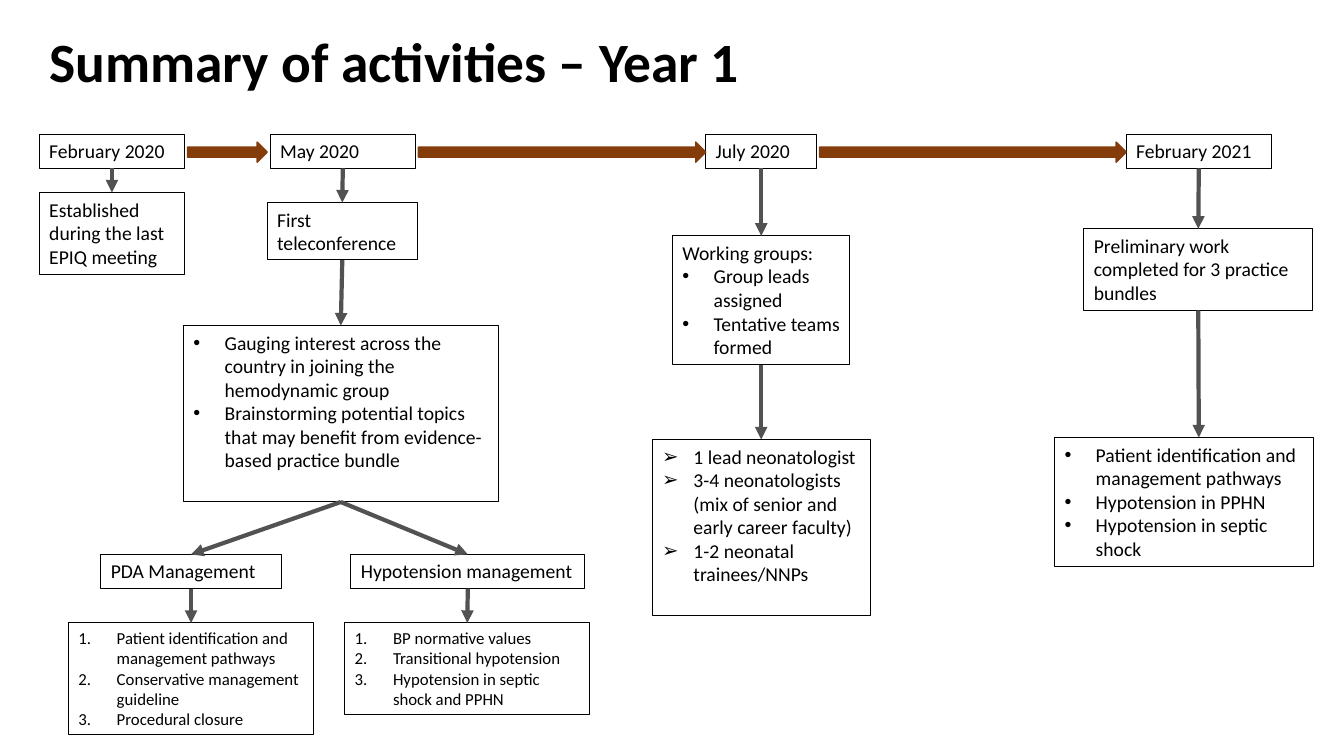
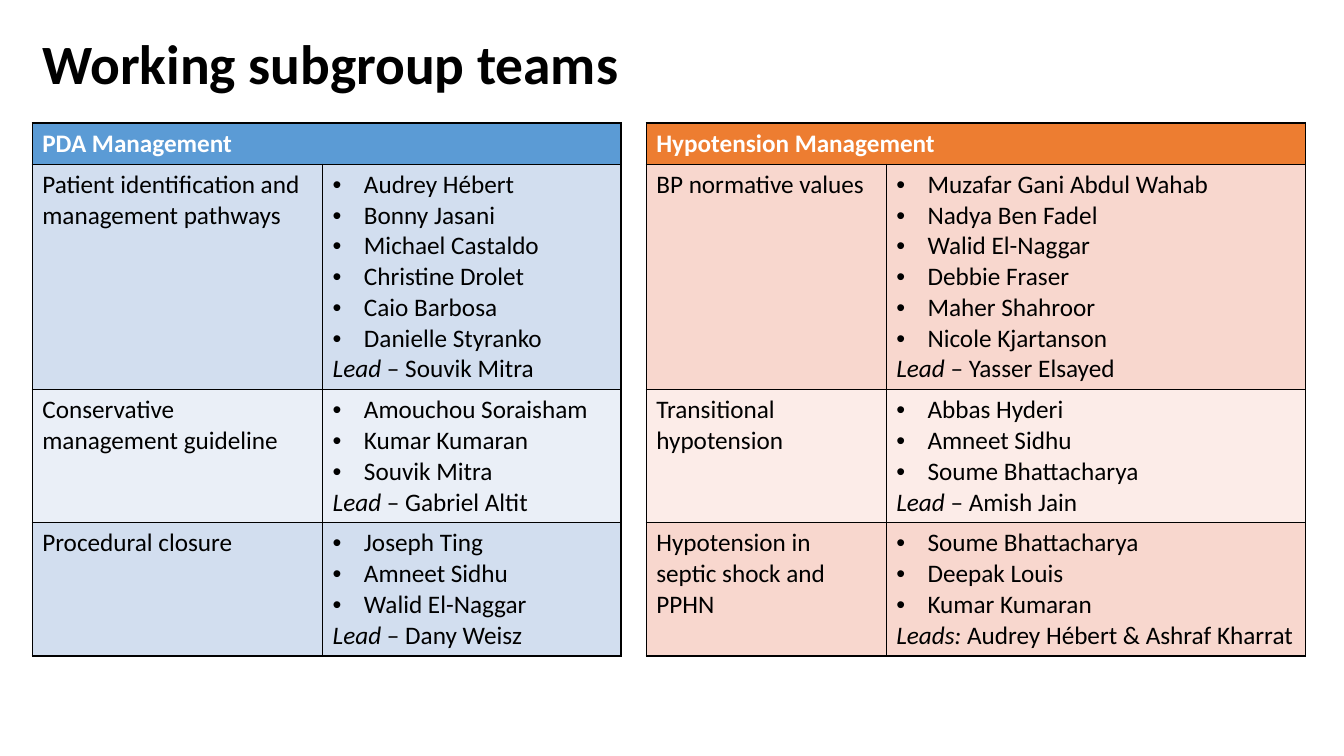
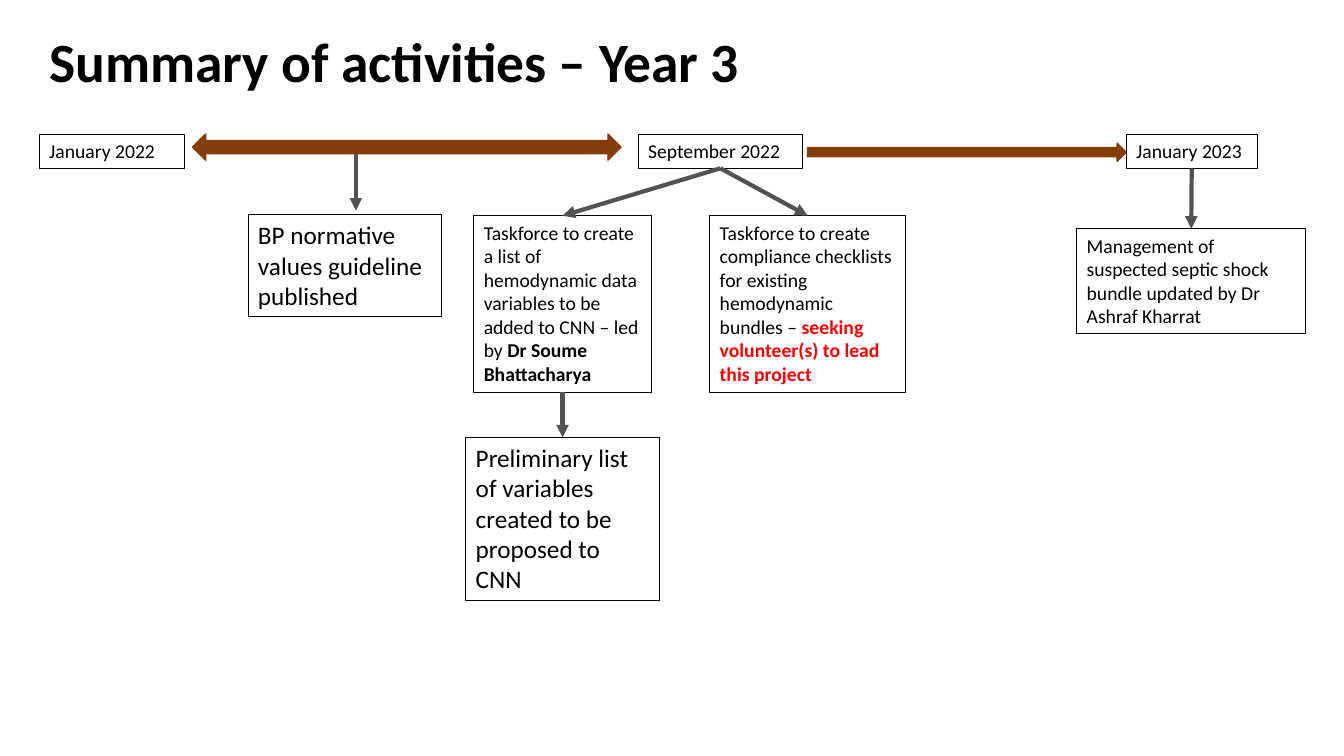
"""Build three slides on the work of a hemodynamic group."""
from lxml.etree import SubElement as Sub
from pptx import Presentation
from pptx.dml.color import RGBColor as Color
from pptx.enum.shapes import MSO_CONNECTOR as Link, MSO_SHAPE as Form
from pptx.enum.text import MSO_ANCHOR as Anchor, MSO_AUTO_SIZE as Fit, PP_ALIGN as Align
from pptx.oxml import parse_xml
from pptx.oxml.ns import nsdecls, qn
from pptx.util import Inches, Pt

FONT = "Calibri"
BLACK = Color(0, 0, 0)
WHITE = Color(255, 255, 255)
RED = Color(255, 0, 0)
GREY = Color(0x52, 0x52, 0x52)
BROWN = Color(0x84, 0x3C, 0x0B)
BLUES = [Color(0x5B, 0x9B, 0xD5), Color(0xD2, 0xDE, 0xEF), Color(0xEA, 0xEF, 0xF7)]
CORALS = [Color(0xED, 0x7D, 0x31), Color(0xF8, 0xD7, 0xCE), Color(0xFC, 0xEC, 0xE8)]
DOT, DART, NUMBER = "•", "➢", "1."
DATE_TOP, DATE_HIGH = 1.33, 0.34
AXIS = 1.51


def say(para, text, size=14, tone=BLACK, bold=False, italic=False):
    """Add one run to a paragraph."""
    run = para.add_run()
    run.text = text
    font = run.font
    font.name, font.size, font.bold, font.italic = FONT, Pt(size), bold, italic
    font.color.rgb = tone


def hang(para, mark):
    """Give a paragraph a bullet or number with a hanging indent."""
    props = para._p.get_or_add_pPr()
    depth = Inches(0.38 if mark == NUMBER else 0.31)
    props.set("marL", str(depth))
    props.set("indent", str(-depth))
    if mark == NUMBER:
        Sub(props, qn("a:buFont"), typeface="+mj-lt")
        Sub(props, qn("a:buAutoNum"), type="arabicPeriod")
    else:
        Sub(props, qn("a:buFont"), typeface="Arial")
        Sub(props, qn("a:buChar"), char=mark)


def add(frame, text="", size=14, mark=None):
    """Add a paragraph, using the first one while it is empty."""
    first = frame.paragraphs[0]
    para = frame.add_paragraph() if first.runs else first
    if mark:
        hang(para, mark)
    if text:
        say(para, text, size)
    return para


def box(slide, at, lines, size=14, mark=None):
    """Draw an outlined text box."""
    shape = slide.shapes.add_textbox(*map(Inches, at))
    shape.line.color.rgb = BLACK
    shape.line.width = Pt(0.75)
    frame = shape.text_frame
    frame.word_wrap = True
    for line in lines:
        add(frame, line, size, mark)
    return shape


def date(slide, left, text, wide=1.44):
    """Draw a date on the time line."""
    return box(slide, (left, DATE_TOP, wide, DATE_HIGH), [text])


def band(slide, left, wide, high=0.2, form=Form.RIGHT_ARROW, mid=AXIS):
    """Draw a brown block arrow on the time line."""
    shape = slide.shapes.add_shape(
        form, Inches(left), Inches(mid - high / 2), Inches(wide), Inches(high))
    shape.shadow.inherit = False
    shape.fill.solid()
    shape.fill.fore_color.rgb = BROWN
    shape.line.color.rgb = BROWN
    shape.line.width = Pt(1)


def arrow(slide, *ends):
    """Draw a grey arrow between two points."""
    line = slide.shapes.add_connector(Link.STRAIGHT, *map(Inches, ends))
    line.line.color.rgb = GREY
    line.line.width = Pt(3)
    Sub(line.line._get_or_add_ln(), qn("a:tailEnd"), type="triangle")
    Sub(line._element.spPr, qn("a:effectLst"))
    return line


def join(slide, *boxes):
    """Chain boxes with arrows from bottom to top."""
    for upper, lower in zip(boxes, boxes[1:]):
        line = arrow(slide, 0, 0, 1, 1)
        line.begin_connect(upper, 2)
        line.end_connect(lower, 0)


def page(deck, text, left=0.39, top=0.3, high=0.69):
    """Add a slide with its title."""
    slide = deck.slides.add_slide(deck.slide_layouts[5])
    title = slide.shapes.title
    title.left, title.top = Inches(left), Inches(top)
    title.width, title.height = Inches(11.5), Inches(high)
    frame = title.text_frame
    frame.auto_size, frame.word_wrap = Fit.NONE, True
    frame.vertical_anchor = Anchor.MIDDLE
    para = frame.paragraphs[0]
    para.alignment, para.line_spacing = Align.LEFT, 0.9
    say(para, text, 39.6, bold=True)
    return slide


def paint(cell, tone):
    """Fill a cell and rule its four sides."""
    cell.fill.solid()
    cell.fill.fore_color.rgb = tone
    props = cell._tc.get_or_add_tcPr()
    for spot, side in enumerate("LRTB"):
        props.insert(spot, parse_xml(
            f'<a:ln{side} {nsdecls("a")} w="12700"><a:solidFill>'
            f'<a:srgbClr val="{BLACK}"/></a:solidFill></a:ln{side}>'))


def team(slide, left, wides, head, tones, groups):
    """Draw a table of groups, members and leads."""
    highs = [0.41] + [0.3 * (len(names) + 1) + 0.1 for _, names, _, _ in groups]
    table = slide.shapes.add_table(
        len(highs), 2, Inches(left), Inches(1.22),
        Inches(sum(wides)), Inches(sum(highs))).table
    for col, wide in zip(table.columns, wides):
        col.width = Inches(wide)
    for row, high in zip(table.rows, highs):
        row.height = Inches(high)
    for spot in range(len(highs)):
        tone = tones[2 - spot % 2] if spot else tones[0]
        for cell in table.rows[spot].cells:
            paint(cell, tone)
    table.cell(0, 0).merge(table.cell(0, 1))
    say(table.cell(0, 0).text_frame.paragraphs[0], head, 18, WHITE, True)
    for spot, (topic, names, role, lead) in enumerate(groups, 1):
        add(table.cell(spot, 0).text_frame, topic, 18)
        frame = table.cell(spot, 1).text_frame
        for name in names:
            add(frame, name, 18, DOT)
        para = add(frame)
        say(para, role, 18, italic=True)
        say(para, lead, 18)


def first(deck):
    """Build the year 1 time line."""
    slide = page(deck, "Summary of activities – Year 1")
    feb = date(slide, 0.39, "February 2020")
    may = date(slide, 2.68, "May 2020")
    july = date(slide, 7, "July 2020", 1.1)
    last = date(slide, 11.17, "February 2021")
    for left, wide in ((2.15, 0.79), (4.15, 2.85), (8.13, 3.04)):
        band(slide, left - (0.3 if wide < 1 else 0), wide)if wide > 1 else band(slide, 1.86, 0.79)
    start = box(slide, (0.39, 1.91, 1.44, 0.81), ["Established during the last EPIQ meeting"])
    call = box(slide, (2.65, 2.01, 1.49, 0.57), ["First teleconference"])
    ideas = box(slide, (1.82, 3.23, 3.12, 1.75), [
        "Gauging interest across the country in joining the hemodynamic group",
        "Brainstorming potential topics that may benefit from evidence-based practice bundle",
    ], mark=DOT)
    duct = box(slide, (1, 5.5, 1.79, 0.34), ["PDA Management"])
    press = box(slide, (3.48, 5.5, 2.32, 0.34), ["Hypotension management"])
    paths = box(slide, (0.68, 6.18, 2.43, 1.11), [
        "Patient identification and management pathways",
        "Conservative management guideline",
        "Procedural closure",
    ], 12, NUMBER)
    norms = box(slide, (3.42, 6.18, 2.43, 0.91), [
        "BP normative values",
        "Transitional hypotension",
        "Hypotension in septic shock and PPHN",
    ], 12, NUMBER)
    groups = box(slide, (6.67, 2.34, 1.76, 1.28), ["Working groups:"])
    for text in ("Group leads assigned", "Tentative teams formed"):
        add(groups.text_frame, text, mark=DOT)
    staff = box(slide, (6.47, 4.36, 2.16, 1.75), [
        "1 lead neonatologist",
        "3-4 neonatologists (mix of senior and early career faculty)",
        "1-2 neonatal trainees/NNPs",
    ], mark=DART)
    work = box(slide, (10.75, 2.27, 2.27, 0.81),
               ["Preliminary work completed for 3 practice bundles"])
    box(slide, (10.46, 4.34, 2.57, 1.28), [
        "Patient identification and management pathways",
        "Hypotension in PPHN",
        "Hypotension in septic shock",
    ], mark=DOT)
    join(slide, feb, start)
    join(slide, may, call, ideas, duct, paths)
    join(slide, ideas, press, norms)
    join(slide, july, groups, staff)
    join(slide, last, work)
    arrow(slide, 11.89, 3.08, 11.89, 4.34).begin_connect(work, 2)


def second(deck):
    """Build the tables of subgroup teams."""
    slide = page(deck, "Working subgroup teams", 0.32, 0.39, 0.54)
    team(slide, 0.32, (2.88, 2.96), "PDA Management", BLUES, [
        ("Patient identification and management pathways",
         ["Audrey Hébert", "Bonny Jasani", "Michael Castaldo", "Christine Drolet",
          "Caio Barbosa", "Danielle Styranko"], "Lead", " – Souvik Mitra"),
        ("Conservative management guideline",
         ["Amouchou Soraisham", "Kumar Kumaran", "Souvik Mitra"],
         "Lead", " – Gabriel Altit"),
        ("Procedural closure",
         ["Joseph Ting", "Amneet Sidhu", "Walid El-Naggar"], "Lead", " – Dany Weisz"),
    ])
    team(slide, 6.41, (2.38, 4.16), "Hypotension Management", CORALS, [
        ("BP normative values",
         ["Muzafar Gani Abdul Wahab", "Nadya Ben Fadel", "Walid El-Naggar",
          "Debbie Fraser", "Maher Shahroor", "Nicole Kjartanson"],
         "Lead", " – Yasser Elsayed"),
        ("Transitional hypotension",
         ["Abbas Hyderi", "Amneet Sidhu", "Soume Bhattacharya"],
         "Lead", " – Amish Jain"),
        ("Hypotension in septic shock and PPHN",
         ["Soume Bhattacharya", "Deepak Louis", "Kumar Kumaran"],
         "Leads: ", "Audrey Hébert & Ashraf Kharrat"),
    ])


def third(deck):
    """Build the year 3 time line."""
    slide = page(deck, "Summary of activities – Year 3")
    date(slide, 0.39, "January 2022")
    fall = date(slide, 6.33, "September 2022", 1.63)
    last = date(slide, 11.17, "January 2023", 1.3)
    arrow(slide, 3.53, 1.52, 3.53, 2.09)
    band(slide, 1.91, 4.25, 0.26, Form.LEFT_RIGHT_ARROW, 1.46)
    band(slide, 8.01, 3.16, 0.18)
    box(slide, (2.46, 2.13, 1.92, 1.01), ["BP normative values guideline published"], 18)
    data = box(slide, (4.7, 2.14, 1.76, 1.75), [
        "Taskforce to create a list of hemodynamic data variables to be added to CNN – led by "])
    say(data.text_frame.paragraphs[0], "Dr Soume Bhattacharya", bold=True)
    checks = box(slide, (7.04, 2.14, 1.94, 1.75), [
        "Taskforce to create compliance checklists for existing hemodynamic bundles – "])
    say(checks.text_frame.paragraphs[0], "seeking volunteer(s) to lead this project",
        tone=RED, bold=True)
    shock = box(slide, (10.68, 2.27, 2.27, 1.04), [
        "Management of suspected septic shock bundle updated by Dr Ashraf Kharrat"])
    draft = box(slide, (4.62, 4.34, 1.92, 1.62), [
        "Preliminary list of variables created to be proposed to CNN"], 18)
    join(slide, fall, data, draft)
    join(slide, fall, checks)
    join(slide, last, shock)


def main():
    """Build and save the deck."""
    deck = Presentation()
    deck.slide_width, deck.slide_height = Inches(13.33), Inches(7.5)
    first(deck)
    second(deck)
    third(deck)
    deck.save("out.pptx")


if __name__ == "__main__":
    main()
